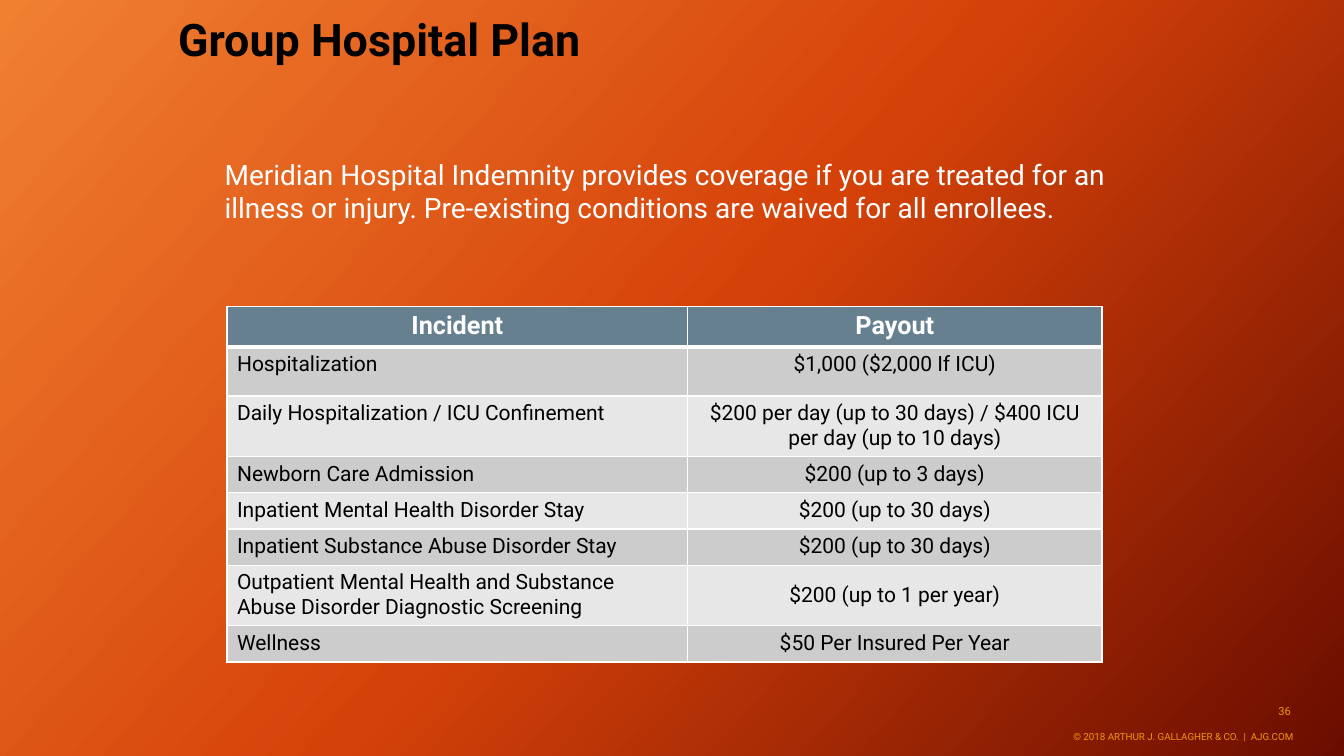
from copy import deepcopy
from pptx import Presentation
from pptx.dml.color import RGBColor as Rgb
from pptx.enum.text import MSO_ANCHOR as Anchor, PP_ALIGN as Align
from pptx.oxml import parse_xml
from pptx.oxml.ns import nsdecls, qn
from pptx.util import Cm, Pt

THEME = {
    "font": "Roboto",
    "back": [(0, "F18031"), (0.5, "D54209"), (1, "6A0D00")],
    "ink": "000000", "white": "FFFFFF", "gold": "F09415",
    "head": "66808F", "bands": ["CCCCCC", "E7E7E7"],
    "title": 32, "body": 20, "label": 18, "cell": 15, "page": 8, "legal": 7,
}


def style(para, size, color, align=Align.LEFT, bold=False):
    para.alignment = align
    font = para.font
    font.name, font.size, font.bold = THEME["font"], Pt(THEME[size]), bold
    font.color.rgb = Rgb.from_string(THEME[color])


def edge(cell, side, width):
    props = cell._tc.get_or_add_tcPr()
    props.append(parse_xml(
        f'<a:{side} {nsdecls("a")} w="{Pt(width)}"><a:solidFill>'
        f'<a:srgbClr val="{THEME["white"]}"/></a:solidFill></a:{side}>'))


deck = Presentation()
deck.slide_width, deck.slide_height = Cm(33.87), Cm(19.05)
slide = deck.slides.add_slide(deck.slide_layouts[6])

back = slide.background.fill
back.gradient()
back.gradient_angle = 318
stops = slide.element.find(".//" + qn("a:gsLst"))
stops.append(deepcopy(stops[0]))
for stop, (place, color) in zip(back.gradient_stops, THEME["back"]):
    stop.position = place
    stop.color.rgb = Rgb.from_string(color)

texts = [
    ("© 2018 ARTHUR J. GALLAGHER & CO.  |  AJG.COM", (18.92, 18.06, 13.92, 1.02),
     Anchor.MIDDLE, "legal", "gold", Align.RIGHT, False),
    ("36", (31.78, 17.4, 1.19, 1.02),
     Anchor.MIDDLE, "page", "gold", Align.CENTER, False),
    ("Group Hospital Plan", (4.24, 0, 18.31, 1.78),
     Anchor.BOTTOM, "title", "ink", Align.LEFT, True),
    ("Meridian Hospital Indemnity provides coverage if you are treated for an "
     "illness or injury. Pre-existing conditions are waived for all enrollees.",
     (5.41, 3.84, 23.57, 2.49),
     Anchor.TOP, "body", "white", Align.LEFT, False),
]
for text, place, anchor, size, color, align, bold in texts:
    frame = slide.shapes.add_textbox(*map(Cm, place)).text_frame
    frame.word_wrap = True
    frame.vertical_anchor = anchor
    frame.text = text
    style(frame.paragraphs[0], size, color, align, bold)

plan = [
    ("Incident", "Payout", 1.02),
    ("Hospitalization", "$1,000 ($2,000 If ICU)", 1.24),
    ("Daily Hospitalization / ICU Confinement",
     "$200 per day (up to 30 days) / $400 ICU per day (up to 10 days)", 1.53),
    ("Newborn Care Admission", "$200 (up to 3 days)", 0.91),
    ("Inpatient Mental Health Disorder Stay", "$200 (up to 30 days)", 0.91),
    ("Inpatient Substance Abuse Disorder Stay", "$200 (up to 30 days)", 0.91),
    ("Outpatient Mental Health and Substance Abuse Disorder Diagnostic Screening",
     "$200 (up to 1 per year)", 1.53),
    ("Wellness", "$50 Per Insured Per Year", 0.91),
]
table = slide.shapes.add_table(
    len(plan), 2, Cm(5.72), Cm(7.72), Cm(22.05), Cm(8.96)).table
for col, width in zip(table.columns, (11.61, 10.44)):
    col.width = Cm(width)
for row, (*words, height) in enumerate(plan):
    table.rows[row].height = Cm(height)
    for col, text in enumerate(words):
        cell = table.cell(row, col)
        cell.text = text
        para = cell.text_frame.paragraphs[0]
        if row == 0:
            style(para, "label", "white", Align.CENTER, True)
            shade = THEME["head"]
        else:
            style(para, "cell", "ink", Align.CENTER if col else Align.LEFT)
            shade = THEME["bands"][(row - 1) % 2]
        for side in ("lnL", "lnR", "lnT", "lnB"):
            thick = (row, side) in ((0, "lnB"), (1, "lnT"))
            edge(cell, side, 3 if thick else 1)
        cell.fill.solid()
        cell.fill.fore_color.rgb = Rgb.from_string(shade)
table.cell(6, 1).vertical_anchor = Anchor.MIDDLE

deck.save("out.pptx")
